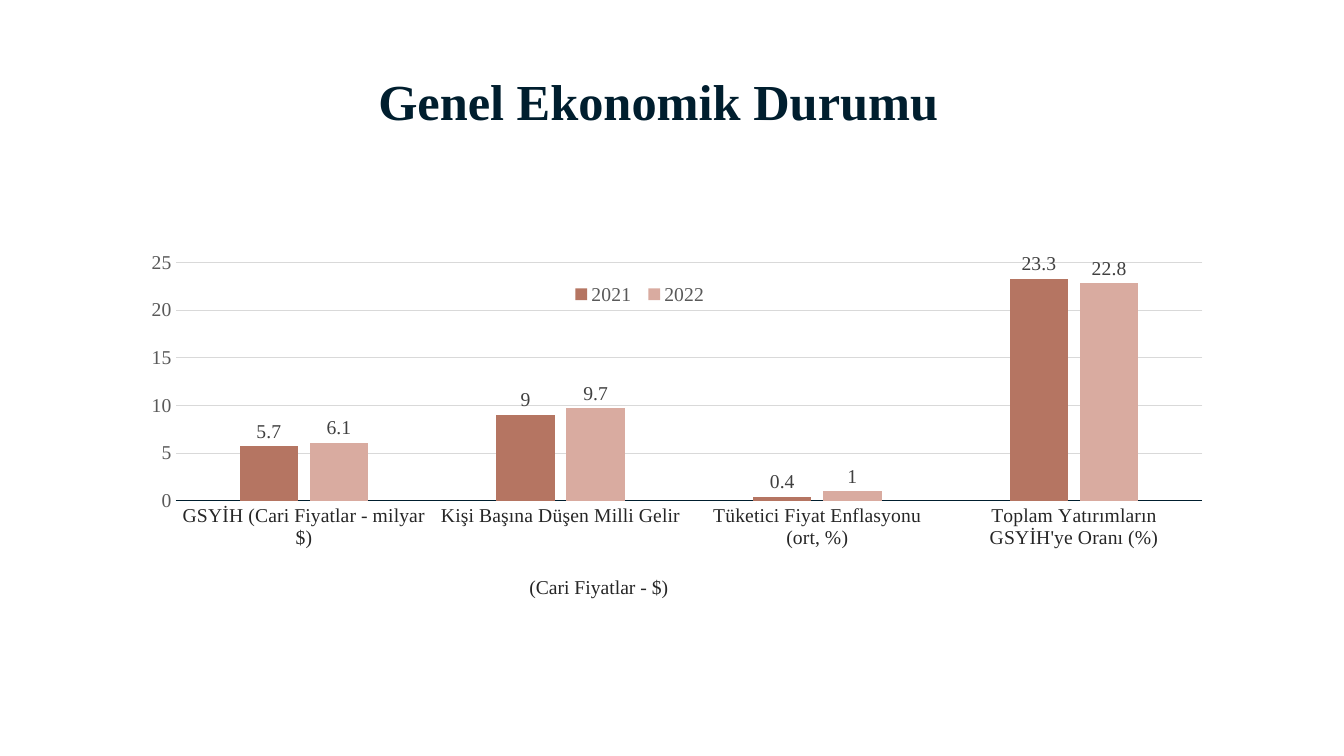
from pptx import Presentation
from pptx.chart.data import CategoryChartData
from pptx.dml.color import RGBColor
from pptx.enum.chart import XL_CHART_TYPE, XL_LABEL_POSITION, XL_LEGEND_POSITION, XL_TICK_MARK
from pptx.enum.text import MSO_ANCHOR, PP_ALIGN
from pptx.oxml import parse_xml
from pptx.oxml.ns import nsdecls, qn
from pptx.util import Inches, Pt

COLUMNS = XL_CHART_TYPE.COLUMN_CLUSTERED
OUTSIDE_END = XL_LABEL_POSITION.OUTSIDE_END
LEGEND_BOTTOM = XL_LEGEND_POSITION.BOTTOM
NO_TICK = XL_TICK_MARK.NONE
MIDDLE = MSO_ANCHOR.MIDDLE
CENTER = PP_ALIGN.CENTER
TITLE_ONLY = 5

FONT = "Times New Roman"
COLORS = {
    "navy": "001E2E",
    "category": "262626",
    "axis": "595959",
    "label": "404040",
    "grid": "D9D9D9",
    "2021": "B57562",
    "2022": "D9ABA0",
}

CATEGORIES = [
    "GSYİH (Cari Fiyatlar - milyar $)",
    "Kişi Başına Düşen Milli Gelir",
    "Tüketici Fiyat Enflasyonu (ort, %)",
    "Toplam Yatırımların GSYİH'ye Oranı (%)",
]
YEARS = {
    "2021": (5.7, 9, 0.4, 23.3),
    "2022": (6.1, 9.7, 1, 22.8),
}


def color(name):
    return RGBColor.from_string(COLORS[name])


def style_font(font, size, color_name, bold=False):
    font.name = FONT
    font.size = Pt(size)
    font.bold = bold
    font.color.rgb = color(color_name)


def place(shape, left, top, width, height):
    shape.left, shape.top = Inches(left), Inches(top)
    shape.width, shape.height = Inches(width), Inches(height)


def write_line(shape, text, size, color_name, bold=False):
    frame = shape.text_frame
    frame.word_wrap = True
    frame.vertical_anchor = MIDDLE
    paragraph = frame.paragraphs[0]
    paragraph.alignment = CENTER
    run = paragraph.add_run()
    run.text = text
    style_font(run.font, size, color_name, bold)
    return paragraph


def set_layout(element, index, x, y, width, height, inner=False):
    """Place a chart part by fractions of the chart area."""
    for layout in element.findall(qn("c:layout")):
        element.remove(layout)
    target = '<c:layoutTarget val="inner"/>' if inner else ""
    element.insert(index, parse_xml(
        f'<c:layout {nsdecls("c")}><c:manualLayout>{target}'
        '<c:xMode val="edge"/><c:yMode val="edge"/>'
        f'<c:x val="{x}"/><c:y val="{y}"/><c:w val="{width}"/><c:h val="{height}"/>'
        '</c:manualLayout></c:layout>'))


def add_title(slide):
    title = slide.shapes.title
    place(title, 3.12, 0.28, 6.82, 1.51)
    paragraph = write_line(title, "Genel Ekonomik Durumu", 36, "navy", bold=True)
    paragraph.line_spacing = 0.9


def format_axes(chart):
    category_axis, value_axis = chart.category_axis, chart.value_axis
    for axis, color_name in ((category_axis, "category"), (value_axis, "axis")):
        axis.major_tick_mark = axis.minor_tick_mark = NO_TICK
        style_font(axis.tick_labels.font, 14, color_name)
    category_axis.format.line.color.rgb = color("navy")
    category_axis.format.line.width = Pt(0.75)

    value_axis.minimum_scale, value_axis.maximum_scale = 0, 25
    value_axis.major_unit = 5
    value_axis.format.line.fill.background()
    grid_line = value_axis.major_gridlines.format.line
    grid_line.color.rgb = color("grid")
    grid_line.width = Pt(0.75)


def format_series(plot):
    plot.gap_width, plot.overlap = 219, -20
    plot.vary_by_categories = False
    for series in plot.series:
        series.format.fill.solid()
        series.format.fill.fore_color.rgb = color(series.name)
        labels = series.data_labels
        labels.show_value = True
        labels.position = OUTSIDE_END
        style_font(labels.font, 14, "label")


def format_legend(chart):
    chart.has_legend = True
    legend = chart.legend
    legend.position = LEGEND_BOTTOM
    legend.include_in_layout = False
    style_font(legend.font, 14, "axis")
    set_layout(legend._element, 1, 0.4, 0.08, 0.14, 0.09)


def add_economy_chart(slide):
    data = CategoryChartData()
    data.categories = CATEGORIES
    for year, values in YEARS.items():
        data.add_series(year, values)
    chart = slide.shapes.add_chart(
        COLUMNS, Inches(1.36), Inches(2.49), Inches(10.61), Inches(3.43), data).chart
    chart.has_title = False
    chart.font.name = "Arial Narrow"
    chart.font.size = Pt(10)
    format_axes(chart)
    format_series(chart.plots[0])
    format_legend(chart)
    plot_area = chart._chartSpace.chart.plotArea
    set_layout(plot_area, 0, 0.036, 0.033, 0.96, 0.69, inner=True)


def add_income_note(slide):
    note = slide.shapes.add_textbox(
        Inches(4.84), Inches(5.62), Inches(2.2), Inches(0.4))
    write_line(note, "(Cari Fiyatlar - $)", 14, "category")


def main():
    presentation = Presentation()
    presentation.slide_width = Inches(13.33)
    presentation.slide_height = Inches(7.5)
    slide = presentation.slides.add_slide(presentation.slide_layouts[TITLE_ONLY])

    # Heading
    add_title(slide)

    # Yearly figures, with the unit of the second category below
    add_economy_chart(slide)
    add_income_note(slide)

    presentation.save("out.pptx")


if __name__ == "__main__":
    main()
